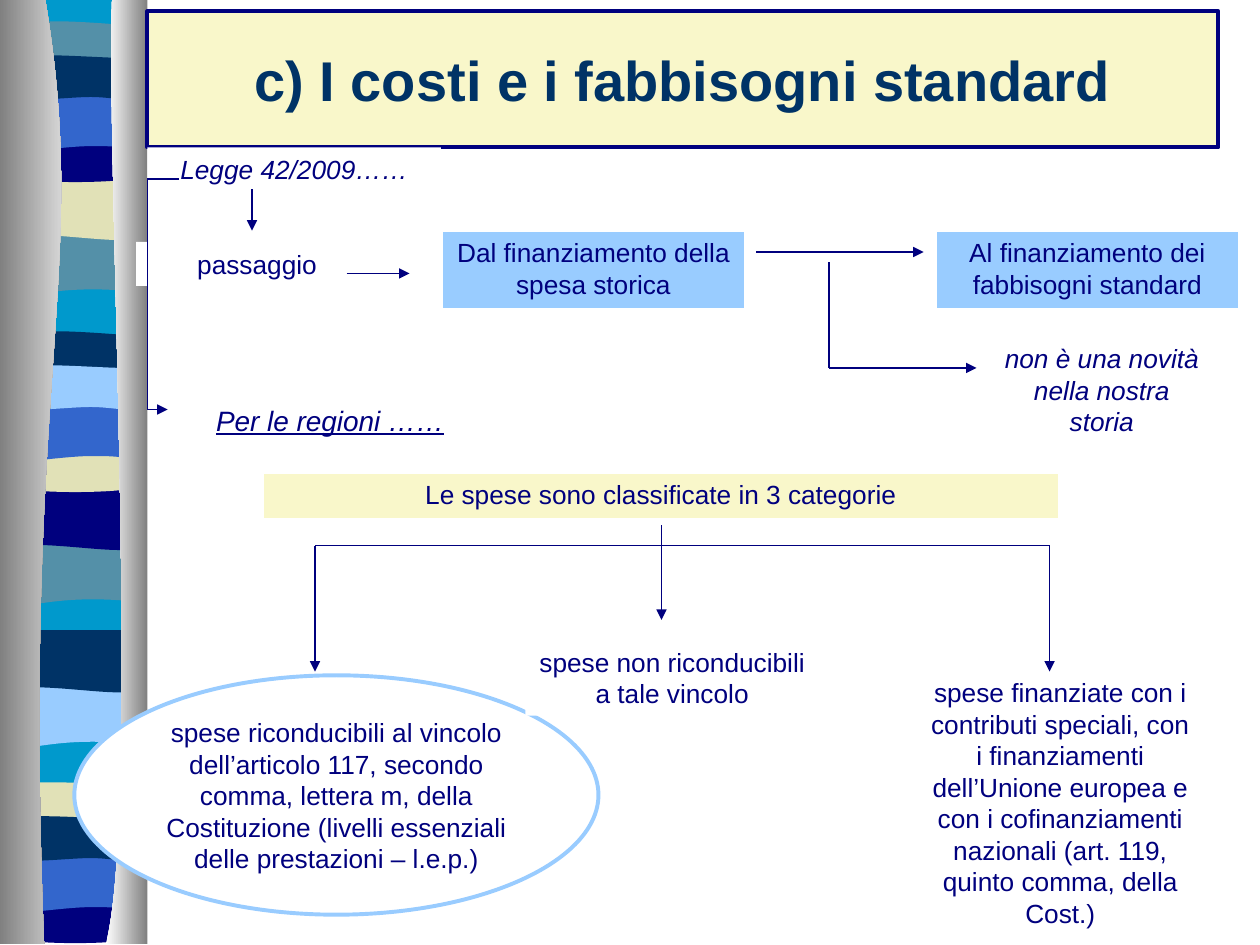
import pptx
import pptx.util
from pptx.dml.color import RGBColor
from pptx.enum.shapes import MSO_CONNECTOR, MSO_SHAPE
from pptx.enum.text import MSO_ANCHOR, MSO_AUTO_SIZE, PP_ALIGN
from pptx.oxml.ns import qn
from pptx.util import Inches, Pt
import lxml.etree

COLORS = {
    "navy": "00007E", "dark": "003366", "blue": "3366CC", "cyan": "0099CC",
    "teal": "5490A8", "sky": "99CCFF", "sand": "E1E1B7", "cream": "F9F7CA",
    "white": "FFFFFF", "gray": "808080",
}


def color(name):
    return RGBColor.from_string(COLORS[name])


def add_outline(start, segments, offset=0):
    """Add a closed outline; a segment is one line end or three Bezier points."""
    builder = slide.shapes.build_freeform(Inches(start[0]), Inches(start[1] + offset))
    builder.add_line_segments(
        [(Inches(x), Inches(y + offset)) for segment in segments for x, y in segment], close=True)
    shape = builder.convert_to_shape()
    shape.shadow.inherit = False
    shape.line.fill.background()
    lines = iter(list(shape.element.iter(qn("a:lnTo"))))
    for segment in segments:
        pieces = [next(lines) for _ in segment]
        if len(pieces) == 3:
            curve = lxml.etree.Element(qn("a:cubicBezTo"))
            pieces[0].addprevious(curve)
            for piece in pieces:
                curve.append(piece[0])
                piece.getparent().remove(piece)
    return shape


presentation = pptx.Presentation()
presentation.slide_width = Inches(10)
presentation.slide_height = Inches(7.5)
slide = presentation.slides.add_slide(presentation.slide_layouts[5])

# Wavy side band: six wave outlines, each repeated at three heights
LEFT, RIGHT = 0.05, 1.13
backdrop = add_outline((LEFT, 0), [[(RIGHT, 0)], [(RIGHT, 7.47)], [(LEFT, 7.47)]])
backdrop.fill.solid()
backdrop.fill.fore_color.rgb = color("cyan")

waves = [
    ((RIGHT, 1.85), [[(RIGHT, 2.32)], [(0.39, 2.24), (0.24, 2.4), (LEFT, 2.32)],
                     [(LEFT, 1.85)]]),
    ((RIGHT, 1.41), [[(RIGHT, 1.88)], [(0.96, 1.96), (0.39, 1.82), (LEFT, 1.88)],
                     [(LEFT, 1.41)]]),
    ((RIGHT, 0.21), [[(RIGHT, 0.45)], [(0.96, 0.5), (0.24, 0.5), (LEFT, 0.45)],
                     [(LEFT, 0.21)], [(0.12, 0.16), (0.29, 0.17), (0.47, 0.17)],
                     [(0.65, 0.17), (1, 0.2), (RIGHT, 0.21)]]),
    ((RIGHT, 1.08), [[(RIGHT, 1.4)], [(0.96, 1.46), (0.24, 1.46), (LEFT, 1.4)],
                     [(LEFT, 1.08)], [(0.72, 1.13), (0.91, 1.08), (RIGHT, 1.08)]]),
    ((RIGHT, 0.74), [[(RIGHT, 1.21)], [(0.97, 1.16), (0.9, 1.16), (0.72, 1.16)],
                     [(0.54, 1.16), (0.22, 1.21), (LEFT, 1.21)], [(LEFT, 0.74)]]),
    ((RIGHT, 0.46), [[(RIGHT, 0.77)], [(1.07, 0.82), (0.9, 0.77), (0.72, 0.77)],
                     [(0.54, 0.77), (0.17, 0.82), (LEFT, 0.77)], [(LEFT, 0.46)],
                     [(0.21, 0.41), (0.79, 0.46), (0.97, 0.46)],
                     [(1.15, 0.46), (1.1, 0.46), (RIGHT, 0.46)]]),
]
repeats = [
    ([0] * 6, ["teal", "sand", "teal", "navy", "blue", "dark"]),
    ([2.46] * 6, ["teal", "navy", "dark", "sand", "blue", "sky"]),
    ([3.59, 3.59] + [6.04] * 4, ["sky", "dark", "sand", "navy", "blue", "dark"]),
]
for offsets, names in repeats:
    for (start, segments), offset, name in zip(waves, offsets, names):
        wave = add_outline(start, segments, offset)
        wave.fill.solid()
        wave.fill.fore_color.rgb = color(name)

edges = [
    ((0.36, 0), [[(0.72, 2.16), (0.17, 2.96), (0.35, 7.49)], [(0, 7.49)], [(0, 0)]],
     ("gray", "white")),
    ((0.89, 0), [[(0.84, 1.25), (1.12, 6.46), (0.84, 7.49)], [(1.17, 7.49)], [(1.17, 0)]],
     ("white", "gray")),
]
for start, segments, stops in edges:
    edge = add_outline(start, segments)
    edge.fill.gradient()
    edge.fill.gradient_angle = 0
    for stop, name in zip(edge.fill.gradient_stops, stops):
        stop.color.rgb = color(name)

# Title, brought in front of the side band
title = slide.shapes.title
slide.shapes.element.append(title.element)
title.left, title.top, title.width, title.height = map(Inches, (1.17, 0.09, 8.5, 1.08))
title.fill.solid()
title.fill.fore_color.rgb = color("cream")
title.line.color.rgb = color("navy")
title.line.width = Pt(2.25)
title.text_frame.text = "c) I costi e i fabbisogni standard"
title.text_frame.vertical_anchor = MSO_ANCHOR.MIDDLE
paragraph = title.text_frame.paragraphs[0]
paragraph.alignment = PP_ALIGN.CENTER
paragraph.font.name = "Arial"
paragraph.font.size = Pt(32)
paragraph.font.bold = True
paragraph.font.color.rgb = color("dark")

# Text, position, fill, line, italic
boxes = [
    ("Legge 42/2009……", (1.17, 1.17, 2.33, 0.35), "white", None, True),
    ("Dal finanziamento della spesa storica", (3.5, 1.83, 2.42, 0.63), "sky", "white", False),
    ("Al finanziamento dei fabbisogni standard", (7.42, 1.83, 2.42, 0.63), "sky", "white", False),
    ("non è una novità nella nostra storia", (7.83, 2.67, 1.83, 0.88), None, "white", True),
    ("passaggio", (1.08, 1.92, 1.92, 0.35), "white", None, False),
    ("Per le regioni ……", (1.33, 3.15, 2.58, 0.37), "white", None, True),
    ("Le spese sono classificate in 3 categorie", (2.08, 3.75, 6.33, 0.38),
     "cream", "white", False),
    ("spese riconducibili al vincolo dell’articolo 117, secondo comma, lettera m, della "
     "Costituzione (livelli essenziali delle prestazioni – l.e.p.)",
     (0.59, 5.36, 4.16, 1.9), "white", "sky", False),
    ("spese non riconducibili a tale vincolo", (4.17, 5.08, 2.33, 0.6), "white", None, False),
    ("spese finanziate con i contributi speciali, con i finanziamenti dell’Unione europea e "
     "con i cofinanziamenti nazionali (art. 119, quinto comma, della Cost.)",
     (7.25, 5.32, 2.33, 2.1), "white", None, False),
]
for text, position, fill, line, italic in boxes:
    kind = MSO_SHAPE.OVAL if line == "sky" else MSO_SHAPE.RECTANGLE
    shape = slide.shapes.add_shape(kind, *map(Inches, position))
    shape.shadow.inherit = False
    if fill:
        shape.fill.solid()
        shape.fill.fore_color.rgb = color(fill)
    else:
        shape.fill.background()
    if line:
        shape.line.color.rgb = color(line)
        shape.line.width = Pt(2.25)
    else:
        shape.line.fill.background()
    frame = shape.text_frame
    frame.word_wrap = True
    frame.auto_size = MSO_AUTO_SIZE.SHAPE_TO_FIT_TEXT
    frame.vertical_anchor = MSO_ANCHOR.TOP
    frame.text = text
    heading = text.startswith("Per le regioni")
    paragraph = frame.paragraphs[0]
    paragraph.alignment = PP_ALIGN.CENTER
    paragraph.font.name = "Arial"
    paragraph.font.size = Pt(16 if heading else 15)
    paragraph.font.italic = italic
    paragraph.font.underline = heading
    paragraph.font.color.rgb = color("navy")

# Each route is a chain of straight lines; the flag puts an arrowhead on its last one
routes = [
    ([(6, 2), (7.33, 2)], True),
    ([(6.58, 2.08), (6.58, 2.92), (7.75, 2.92)], True),
    ([(2, 1.5), (2, 1.83)], True),
    ([(2.75, 2.17), (3.25, 2.17)], True),
    ([(1.42, 1.42), (1.17, 1.42), (1.17, 3.25), (1.33, 3.25)], True),
    ([(5.25, 4.17), (5.25, 4.33), (5.25, 4.92)], True),
    ([(2.5, 4.33), (8.33, 4.33)], False),
    ([(2.5, 4.33), (2.5, 5.33)], True),
    ([(8.33, 4.33), (8.33, 5.33)], True),
]
for points, arrow in routes:
    for begin, end in zip(points, points[1:]):
        connector = slide.shapes.add_connector(
            MSO_CONNECTOR.STRAIGHT, *map(Inches, begin + end))
        connector.line.color.rgb = color("navy")
        connector.line.width = Pt(0.75)
        properties = connector.element.spPr
        lxml.etree.SubElement(properties, qn("a:effectLst"))
        if arrow and end == points[-1]:
            lxml.etree.SubElement(properties.find(qn("a:ln")), qn("a:tailEnd"), type="triangle")

presentation.save("out.pptx")
